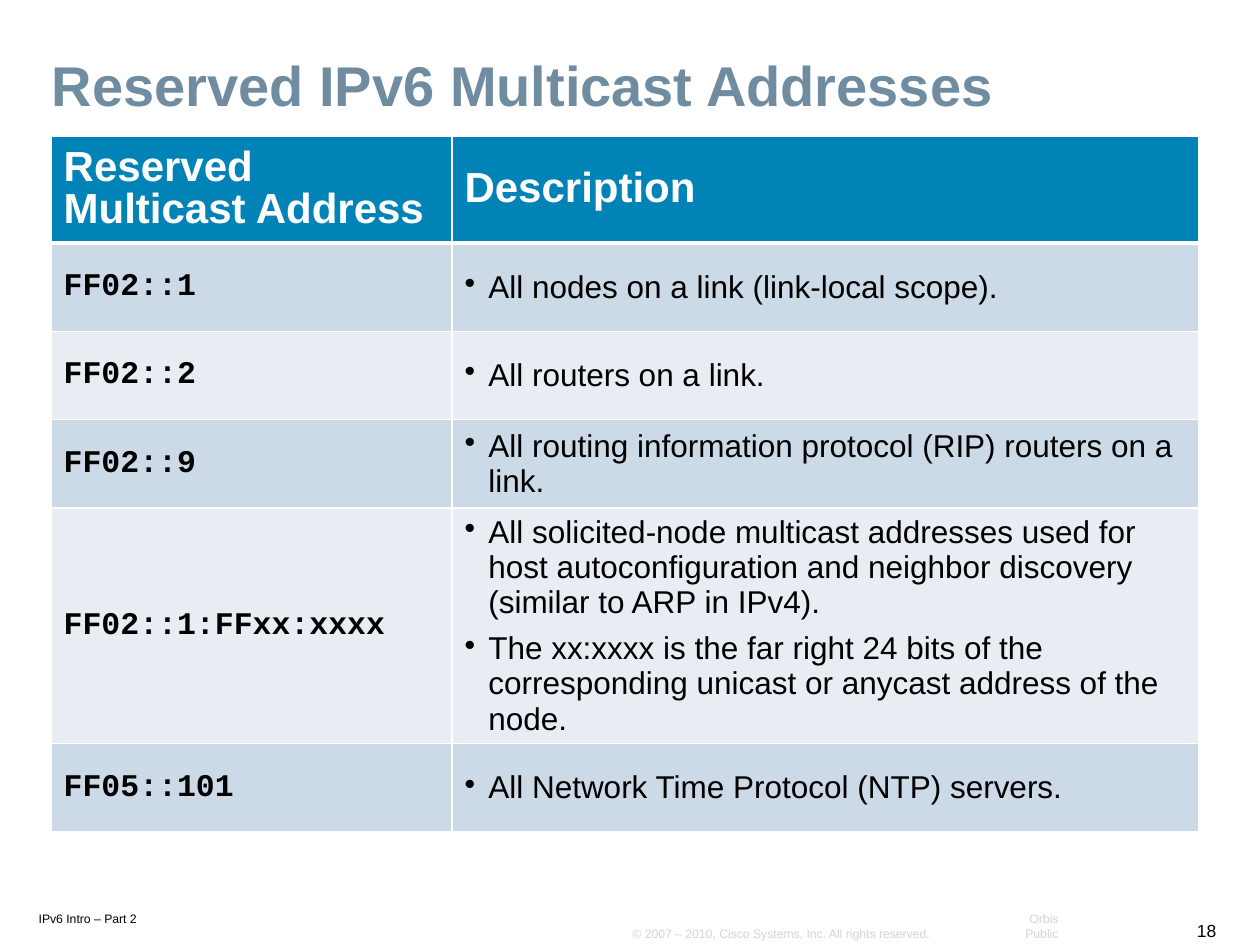
from lxml.etree import SubElement as Sub
from pptx import Presentation
from pptx.dml.color import RGBColor as Rgb
from pptx.enum.text import MSO_ANCHOR as Anchor, PP_ALIGN as Align
from pptx.oxml.ns import qn
from pptx.util import Cm, Pt

HUES = {"title": "708CA1", "head": "0183B7", "odd": "CCD9E6", "even": "E7EDF3",
        "white": "FFFFFF", "black": "000000", "grey": "D3D3D3"}
HEADS = ["Reserved Multicast Address", "Description"]
ROWS = [
    ("FF02::1", ["All nodes on a link (link-local scope)."]),
    ("FF02::2", ["All routers on a link."]),
    ("FF02::9", ["All routing information protocol (RIP) routers on a link."]),
    ("FF02::1:FFxx:xxxx", [
        "All solicited-node multicast addresses used for host autoconfiguration "
        "and neighbor discovery (similar to ARP in IPv4).",
        "The xx:xxxx is the far right 24 bits of the corresponding unicast or "
        "anycast address of the node."]),
    ("FF05::101", ["All Network Time Protocol (NTP) servers."]),
]
WIDTHS = [8.08, 15.06]
HEIGHTS = [2.15, 1.78, 1.78, 1.78, 4.75, 1.78]
FOOTS = [
    ("IPv6 Intro – Part 2", 0.53, 18.24, 2.67, 0.53, 7, "black", Align.LEFT),
    ("18", 23.88, 18.42, 0.89, 0.66, 10, "black", Align.RIGHT),
    ("© 2007 – 2010, Cisco Systems, Inc. All rights reserved.",
     12.5, 18.54, 6.53, 0.53, 7, "grey", Align.LEFT),
    ("Orbis Public", 19.79, 18.54, 1.8, 0.53, 7, "grey", Align.RIGHT),
]


def style(para, size, hue, bold=False, face="Arial"):
    """Format every run of a paragraph."""
    for run in para.runs:
        font = run.font
        font.size, font.bold, font.name = Pt(size), bold, face
        font.color.rgb = Rgb.from_string(HUES[hue])


def bullet(para):
    """Give a paragraph a hanging bullet."""
    props = para._p.get_or_add_pPr()
    props.set("marL", str(Cm(0.48)))
    props.set("indent", str(-Cm(0.48)))
    Sub(props, qn("a:buChar"), char="•")


def edge(cell, base):
    """Draw white borders around a cell, with its own bottom width."""
    props = cell._tc.get_or_add_tcPr()
    for side, width in (("L", 1), ("R", 1), ("T", 1), ("B", base)):
        line = Sub(props, qn(f"a:ln{side}"), w=str(Pt(width)))
        Sub(Sub(line, qn("a:solidFill")), qn("a:srgbClr"), val=HUES["white"])


def fill_cell(cell, lines, hue, base=1):
    """Set the text, borders and fill of a cell and return its paragraphs."""
    edge(cell, base)
    cell.fill.solid()
    cell.fill.fore_color.rgb = Rgb.from_string(HUES[hue])
    cell.vertical_anchor = Anchor.MIDDLE
    cell.text_frame.text = "\n".join(lines)
    paras = cell.text_frame.paragraphs
    for para in paras:
        para.space_after = Pt(6)
    return paras


def add_title(slide, left, top, width, height):
    """Place and format the slide title."""
    title = slide.shapes.title
    title.left, title.top, title.width, title.height = map(Cm, (left, top, width, height))
    frame = title.text_frame
    frame.text = "Reserved IPv6 Multicast Addresses"
    frame.vertical_anchor = Anchor.MIDDLE
    para = frame.paragraphs[0]
    para.alignment, para.line_spacing = Align.LEFT, 0.9
    style(para, 32, "title", True)


def add_grid(slide, left, top):
    """Build the table of addresses from its top left corner."""
    table = slide.shapes.add_table(
        len(HEIGHTS), len(WIDTHS), Cm(left), Cm(top),
        Cm(sum(WIDTHS)), Cm(sum(HEIGHTS))).table
    for col, width in zip(table.columns, WIDTHS):
        col.width = Cm(width)
    for row, height in zip(table.rows, HEIGHTS):
        row.height = Cm(height)
    for col, head in enumerate(HEADS):
        para = fill_cell(table.cell(0, col), [head], "head", 3)[0]
        para.line_spacing = 0.9
        style(para, 24, "white", True)
    for row, (code, notes) in enumerate(ROWS, 1):
        hue = "odd" if row % 2 else "even"
        para = fill_cell(table.cell(row, 0), [code], hue)[0]
        style(para, 18, "black", True, "Courier New")
        for para in fill_cell(table.cell(row, 1), notes, hue):
            bullet(para)
            style(para, 18, "black")


def add_foot(slide, text, left, top, width, height, size, hue, align):
    """Place one footer label in its box."""
    frame = slide.shapes.add_textbox(*map(Cm, (left, top, width, height))).text_frame
    frame.text = text
    frame.word_wrap = False
    frame.vertical_anchor = Anchor.BOTTOM
    frame.margin_top = frame.margin_bottom = Cm(0.1)
    para = frame.paragraphs[0]
    para.alignment = align
    style(para, size, hue)


def main():
    """Build and save the slide."""
    deck = Presentation()
    deck.slide_width, deck.slide_height = Cm(25.4), Cm(19.05)
    slide = deck.slides.add_slide(deck.slide_layouts[5])
    add_title(slide, 0.79, 1.02, 23.67, 1.52)
    add_grid(slide, 1.03, 2.75)
    for foot in FOOTS:
        add_foot(slide, *foot)
    deck.save("out.pptx")


if __name__ == "__main__":
    main()
